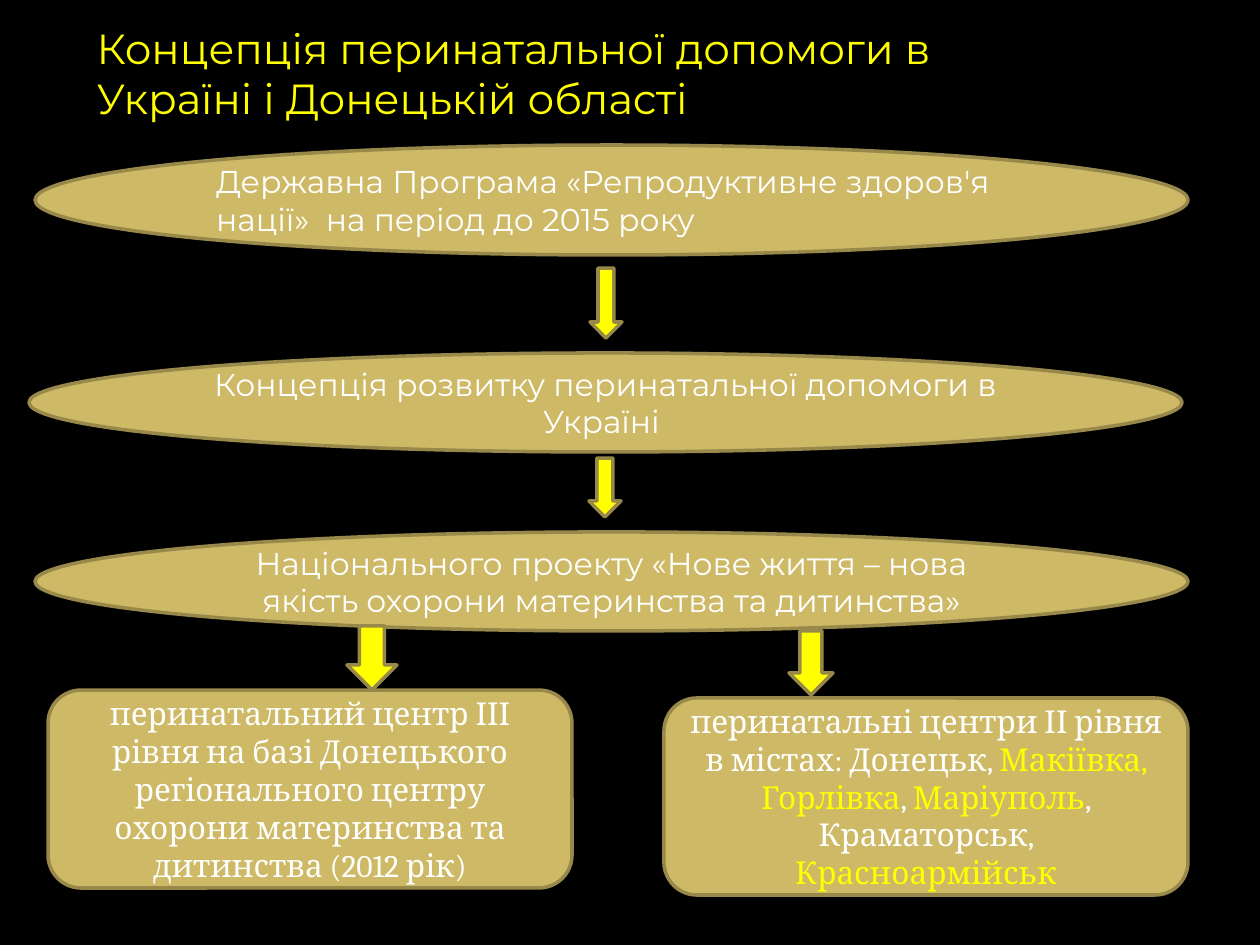
from dataclasses import dataclass

from pptx import Presentation
from pptx.dml.color import RGBColor
from pptx.enum.shapes import MSO_SHAPE
from pptx.enum.text import MSO_ANCHOR, PP_ALIGN
from pptx.util import Emu, Pt

OVAL, ROUND, ARROW = MSO_SHAPE.OVAL, MSO_SHAPE.ROUNDED_RECTANGLE, MSO_SHAPE.DOWN_ARROW
LEFT, CENTER = PP_ALIGN.LEFT, PP_ALIGN.CENTER
TOP, MIDDLE = MSO_ANCHOR.TOP, MSO_ANCHOR.MIDDLE
BLACK, WHITE, YELLOW, GOLD, EDGE = "000000", "FFFFFF", "FFFF00", "CEB966", "98894B"
SANS, SERIF = "Montserrat", "Cambria"
SCALE = 914400 / 126


@dataclass
class Run:
    text: str
    color: str = WHITE


@dataclass
class Node:
    kind: int
    box: tuple[int, int, int, int]
    runs: tuple[Run, ...] = ()
    font: str = SANS
    align: int = CENTER
    fill: str = GOLD


def px(num: int) -> Emu:
    return Emu(round(num * SCALE))


def rgb(code: str) -> RGBColor:
    return RGBColor.from_string(code)


def write(frame, runs: tuple[Run, ...], font: str, size: int, align: int, anchor: int) -> None:
    frame.word_wrap = True
    frame.vertical_anchor = anchor
    para = frame.paragraphs[0]
    para.alignment = align
    style = {"name": font, "size": Pt(size), "bold": False}
    for run in runs:
        item = para.add_run()
        item.text = run.text
        for key, val in style.items():
            setattr(item.font, key, val)
        item.font.color.rgb = rgb(run.color)


def draw(slide, node: Node) -> None:
    shape = slide.shapes.add_shape(node.kind, *map(px, node.box))
    shape.shadow.inherit = False
    shape.fill.solid()
    shape.fill.fore_color.rgb = rgb(node.fill)
    shape.line.color.rgb = rgb(EDGE)
    shape.line.width = Pt(2)
    if node.runs:
        write(shape.text_frame, node.runs, node.font, 18, node.align, MIDDLE)


def head(slide, text: str) -> None:
    title = slide.shapes.title
    spot = {"left": 84, "top": 16, "width": 953, "height": 115}
    for key, val in spot.items():
        setattr(title, key, px(val))
    write(title.text_frame, (Run(text, YELLOW),), SANS, 24, LEFT, TOP)


NODES = [
    Node(OVAL, (35, 145, 1153, 110),
         (Run("Державна Програма «Репродуктивне здоров'я нації»  на період до 2015 року"),),
         align=LEFT),
    Node(OVAL, (29, 353, 1153, 99),
         (Run("Концепція розвитку перинатальної допомоги в Україні "),)),
    Node(OVAL, (35, 532, 1153, 99),
         (Run("Національного проекту «Нове життя – нова якість охорони материнства та дитинства»"),)),
    Node(ROUND, (48, 690, 524, 198),
         (Run("перинатальний центр ІІІ рівня на базі Донецького регіонального центру "
              "охорони материнства та дитинства (2012 рік)"),), SERIF),
    Node(ROUND, (664, 698, 524, 197),
         (Run("перинатальні центри ІІ рівня в містах: Донецьк, "),
          Run("Макіївка, Горлівка", YELLOW), Run(", "),
          Run("Маріуполь", YELLOW), Run(", Краматорськ, "),
          Run("Красноармійськ", YELLOW)), SERIF),
]
ARROWS = [
    (590, 268, 32, 70),
    (589, 458, 32, 59),
    (347, 626, 50, 64),
    (789, 631, 44, 64),
]


def main() -> None:
    deck = Presentation()
    deck.slide_width, deck.slide_height = px(1260), px(945)
    slide = deck.slides.add_slide(deck.slide_layouts[5])
    back = slide.background.fill
    back.solid()
    back.fore_color.rgb = rgb(BLACK)
    head(slide, "Концепція перинатальної допомоги в Україні і Донецькій області")
    for node in NODES:
        draw(slide, node)
    for box in ARROWS:
        draw(slide, Node(ARROW, box, fill=YELLOW))
    deck.save("out.pptx")


if __name__ == "__main__":
    main()
